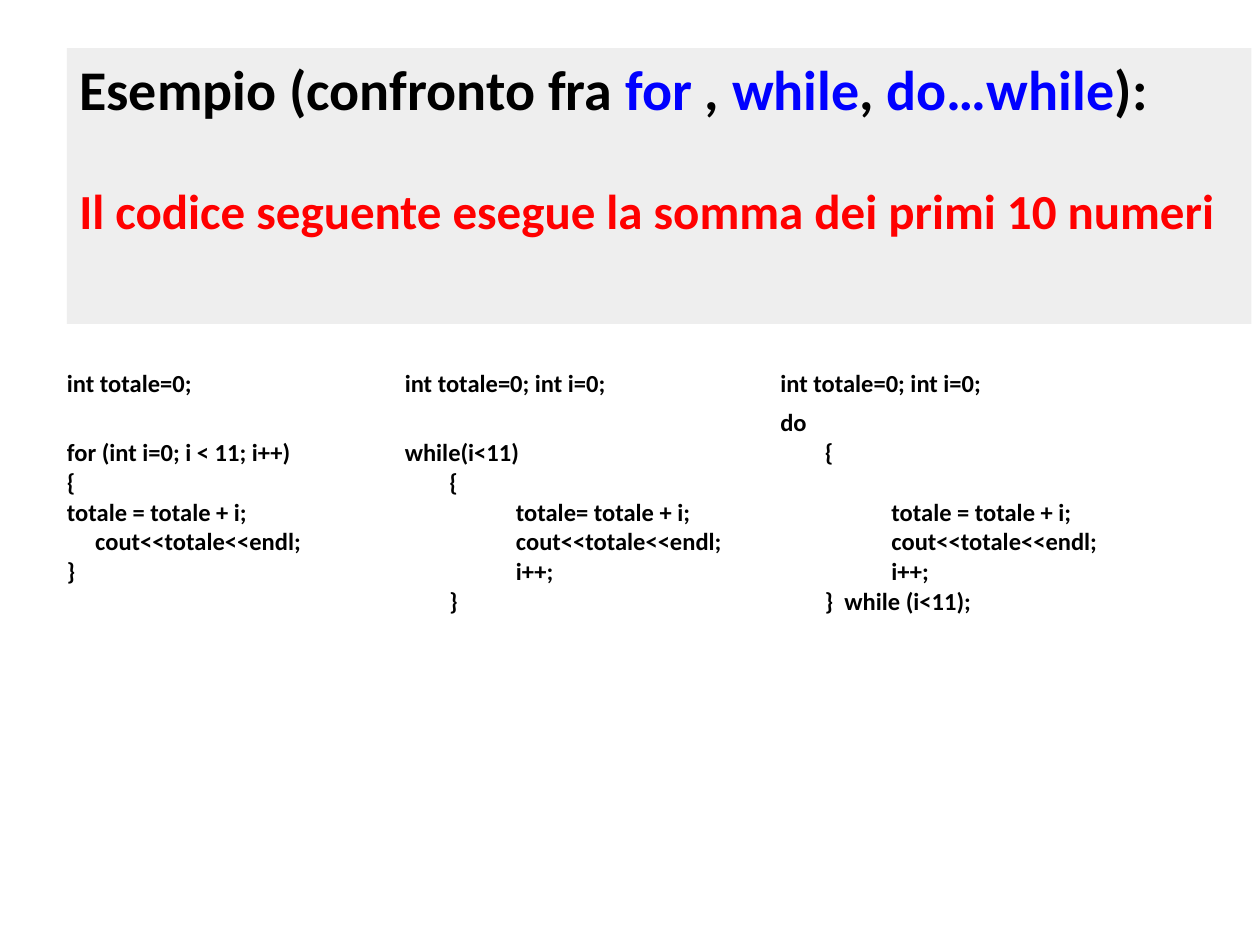
from pptx import Presentation
from pptx.dml.color import RGBColor
from pptx.enum.shapes import MSO_SHAPE
from pptx.enum.text import MSO_ANCHOR, PP_ALIGN
from pptx.util import Cm, Pt

BLACK = RGBColor(0x00, 0x00, 0x00)
BLUE = RGBColor(0x00, 0x00, 0xFF)
RED = RGBColor(0xFF, 0x00, 0x00)
GREY = RGBColor(0xEE, 0xEE, 0xEE)
FONT = "Calibri"

# Indents of the code lines, in cm
STEP, BLOCK, BODY = 0.57, 0.9, 2.24

TITLE = [
    ("Esempio (confronto fra\u00a0", BLACK), ("for", BLUE), ("\u00a0,\u00a0", BLACK),
    ("while", BLUE), (",", BLACK), (" do…while", BLUE), ("):", BLACK),
]
SUBTITLE = [("Il codice seguente esegue la somma dei primi 10 numeri", RED)]

# Per loop: column width (cm), declaration, anchor, code lines (indent, text, space before)
LOOPS = [
    (6.81, "int totale=0;", MSO_ANCHOR.MIDDLE, [
        (0, "for (int i=0; i < 11; i++)", 0),
        (0, "{", 0),
        (0, "totale = totale + i;", 0),
        (STEP, "cout<<totale<<endl;", 0),
        (0, "}", 0),
    ]),
    (7.57, "int totale=0; int i=0;", MSO_ANCHOR.BOTTOM, [
        (0, "while(i<11)", 0),
        (BLOCK, "{", 0),
        (BODY, "totale= totale + i;", 0),
        (BODY, "cout<<totale<<endl;", 0),
        (BODY, "i++;", 0),
        (BLOCK, "}", 0),
    ]),
    (7.42, "int totale=0; int i=0;", MSO_ANCHOR.MIDDLE, [
        (0, "do", 0),
        (BLOCK, "{", 0),
        (BODY, "totale = totale + i;", 17),
        (BODY, "cout<<totale<<endl;", 0),
        (BODY, "i++;", 0),
        (BLOCK, "}  while (i<11);", 0),
    ]),
]


def write_spans(para, spans, size):
    """Add coloured bold spans to a justified paragraph."""
    para.alignment = PP_ALIGN.JUSTIFY
    for text, color in spans:
        span = para.add_run()
        span.text = text
        span.font.name = FONT
        span.font.size = Pt(size)
        span.font.bold = True
        span.font.color.rgb = color


def add_heading(page, left, top, width, height):
    box = page.shapes.add_shape(MSO_SHAPE.RECTANGLE, left, top, width, height)
    box.shadow.inherit = False
    box.fill.solid()
    box.fill.fore_color.rgb = GREY
    box.line.fill.background()
    frame = box.text_frame
    frame.word_wrap = True
    frame.vertical_anchor = MSO_ANCHOR.TOP
    write_spans(frame.paragraphs[0], TITLE, 32)
    subtitle = frame.add_paragraph()
    subtitle.space_before = Pt(34)
    write_spans(subtitle, SUBTITLE, 28)


def fill_cell(cell, lines, anchor):
    """Write code lines, each with its indent and space before."""
    cell.fill.background()
    cell.vertical_anchor = anchor
    cell.margin_left = cell.margin_right = Cm(0.05)
    cell.margin_top = cell.margin_bottom = Cm(0.05)
    frame = cell.text_frame
    for number, (indent, text, gap) in enumerate(lines):
        para = frame.add_paragraph() if number else frame.paragraphs[0]
        write_spans(para, [(text, BLACK)], 14)
        if gap:
            para.space_before = Pt(gap)
        if indent:
            para._p.get_or_add_pPr().set("marL", str(Cm(indent)))


def add_loops(page, left, top, width, height):
    table = page.shapes.add_table(2, len(LOOPS), left, top, width, height).table
    table.first_row = False
    table.horz_banding = False
    table.rows[0].height = Cm(0.86)
    table.rows[1].height = height - Cm(0.86)
    for column, (column_width, declaration, anchor, code) in enumerate(LOOPS):
        table.columns[column].width = Cm(column_width)
        fill_cell(table.cell(0, column), [(0, declaration, 0)], MSO_ANCHOR.MIDDLE)
        fill_cell(table.cell(1, column), code, anchor)


def main():
    deck = Presentation()
    deck.slide_width, deck.slide_height = Cm(25.4), Cm(19.05)
    page = deck.slides.add_slide(deck.slide_layouts[6])
    # Code of the three loops, side by side
    add_loops(page, Cm(1.3), Cm(7.32), Cm(21.8), Cm(5.13))
    # Grey heading panel
    add_heading(page, Cm(1.35), Cm(0.97), Cm(23.88), Cm(5.56))
    deck.save("out.pptx")


if __name__ == "__main__":
    main()
